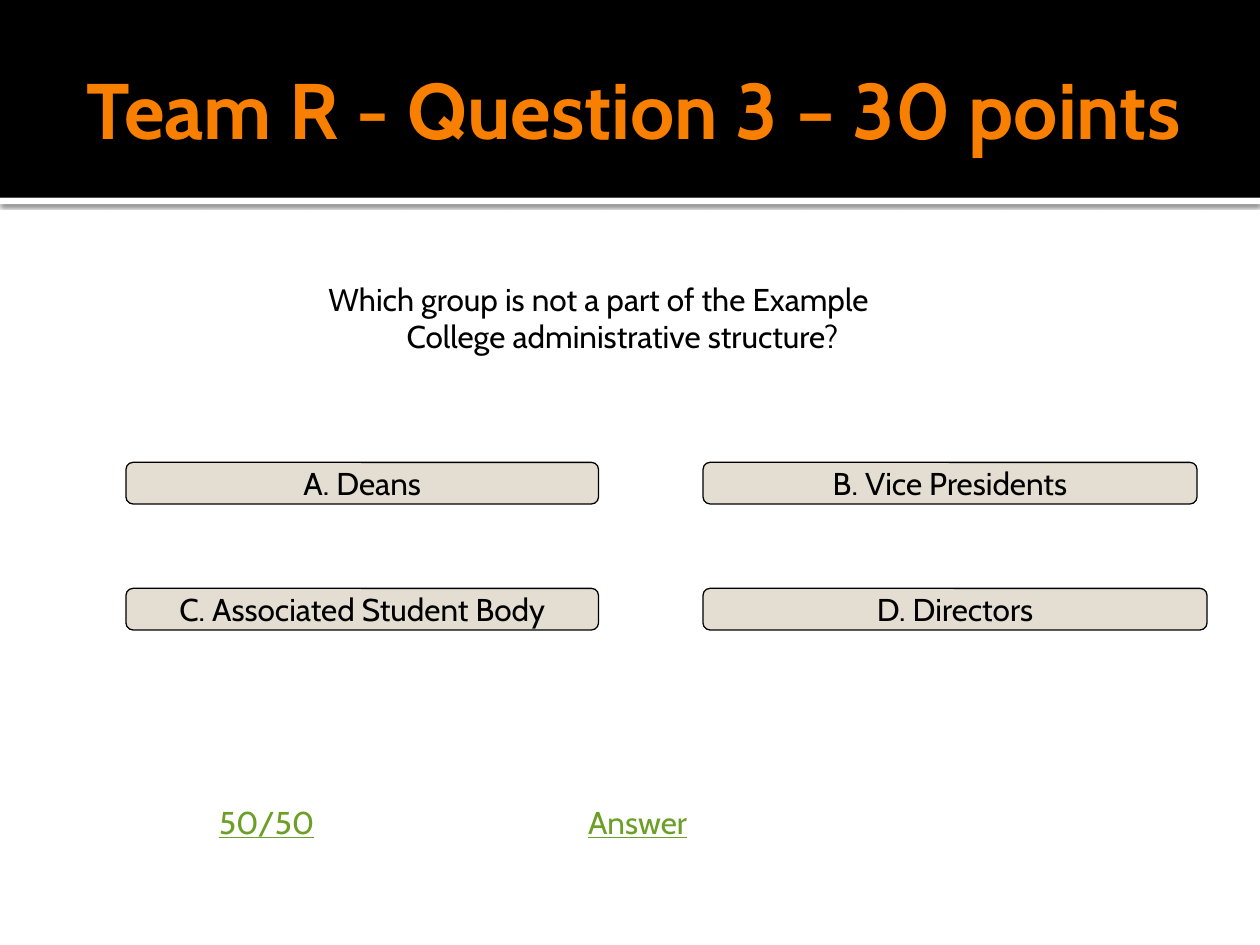
from lxml import etree
from pptx import Presentation
from pptx.dml.color import RGBColor
from pptx.enum.shapes import MSO_SHAPE
from pptx.enum.text import MSO_ANCHOR, PP_ALIGN
from pptx.oxml import parse_xml
from pptx.oxml.ns import nsdecls
from pptx.util import Inches, Pt

RECTANGLE = MSO_SHAPE.RECTANGLE
ROUNDED = MSO_SHAPE.ROUNDED_RECTANGLE
MIDDLE = MSO_ANCHOR.MIDDLE
CENTER = PP_ALIGN.CENTER
FONT = "Cabin"
COLORS = {
    "black": "000000",
    "white": "FFFFFF",
    "title": "F97F00",
    "option": "E3DED1",
    "link": "6B9F25",
}


def add_box(kind, left, top, width, height, color):
    shape = slide.shapes.add_shape(
        kind, Inches(left), Inches(top), Inches(width), Inches(height)
    )
    shape.shadow.inherit = False
    shape.fill.solid()
    shape.fill.fore_color.rgb = RGBColor.from_string(COLORS[color])
    shape.line.fill.background()
    return shape


def write_text(text_frame, text, color="black", size=18, bold=False):
    paragraph = text_frame.paragraphs[0]
    paragraph.alignment = CENTER
    run = paragraph.add_run()
    run.text = text
    run.font.name = FONT
    run.font.size = Pt(size)
    run.font.bold = bold
    run.font.color.rgb = RGBColor.from_string(COLORS[color])
    return paragraph


presentation = Presentation()
presentation.slide_width = Inches(10)
presentation.slide_height = Inches(7.5)
slide = presentation.slides.add_slide(presentation.slide_layouts[5])

strip = add_box(RECTANGLE, 0, 1.57, 10, 0.05, "white")
effects = strip._element.spPr.find("{*}effectLst")
effects.append(parse_xml(
    f'<a:outerShdw {nsdecls("a")} blurRad="{Pt(2.5)}" dist="{Pt(0.8)}" dir="5400000" rotWithShape="0"/>'
))
shadow_color = etree.SubElement(effects[0], effects[0].tag.replace("outerShdw", "srgbClr"))
shadow_color.set("val", COLORS["black"])
etree.SubElement(shadow_color, shadow_color.tag.replace("srgbClr", "alpha")).set("val", "60000")

add_box(RECTANGLE, 0, 0, 10, 1.57, "black")

title = slide.shapes.title
title.left, title.top = Inches(0.5), Inches(0.17)
title.width, title.height = Inches(9), Inches(1.37)
title_frame = title.text_frame
title_frame.vertical_anchor = MIDDLE
title_frame.margin_left = Inches(0.1)
title_frame.margin_right = title_frame.margin_top = title_frame.margin_bottom = Inches(0.05)
write_text(title_frame, "Team R - Question 3 – 30 points", "title", 45, True)
slide.shapes._spTree.append(title._element)

question = slide.shapes.add_textbox(Inches(2.25), Inches(2.17), Inches(5), Inches(0.7))
question.text_frame.word_wrap = True
paragraph = write_text(
    question.text_frame,
    "Which group is not a part of the Example College administrative structure?",
)
properties = paragraph._p.get_or_add_pPr()
properties.set("marL", str(Inches(0.38)))
properties.set("indent", str(-Inches(0.38)))

options = [
    ("A. Deans", 1, 3.67, 3.75),
    ("B. Vice Presidents", 5.58, 3.67, 3.92),
    ("C. Associated Student Body", 1, 4.67, 3.75),
    ("D. Directors", 5.58, 4.67, 4),
]
for text, left, top, width in options:
    option = add_box(ROUNDED, left, top, width, 0.33, "option")
    option.line.color.rgb = RGBColor.from_string(COLORS["black"])
    option.line.width = Pt(0.75)
    option.text_frame.word_wrap = False
    option.text_frame.vertical_anchor = MIDDLE
    write_text(option.text_frame, text)

table = slide.shapes.add_table(
    1, 3, Inches(0.58), Inches(6.33), Inches(8.83), Inches(0.58)
).table
table.first_row = False
table.horz_banding = False
for cell, text in zip(table.rows[0].cells, ["50/50", "Answer", ""]):
    cell.fill.background()
    if text:
        paragraph = write_text(cell.text_frame, text, "link")
        paragraph.runs[0].font.underline = True
        paragraph._p.get_or_add_pPr().set("marL", str(Inches(0.13)))

presentation.save("out.pptx")
